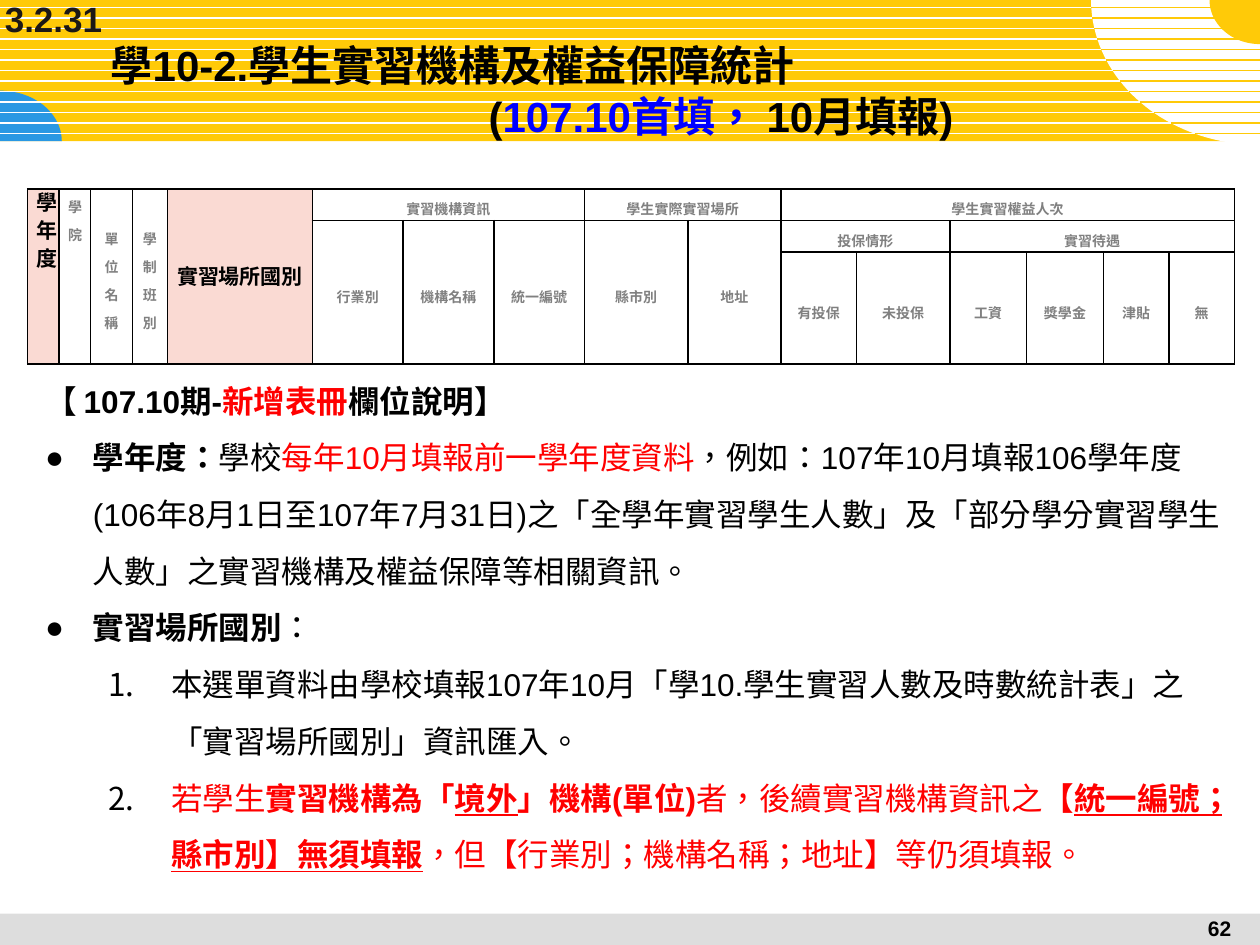
from math import cos, sin, sqrt, pi
from lxml.etree import SubElement
from pptx import Presentation
from pptx.dml.color import RGBColor
from pptx.enum.shapes import MSO_CONNECTOR as Connector, MSO_SHAPE as Shape
from pptx.enum.text import MSO_ANCHOR as Anchor, PP_ALIGN as Align
from pptx.oxml.ns import qn
from pptx.util import Inches, Pt

COLORS = {
    "gold": "FFCA08", "sky": "2998E3", "white": "FFFFFF", "footer": "DDDDDD",
    "black": "000000", "red": "FF0000", "blue": "0000FF", "gray": "808080",
    "pink": "FADAD3", "dark": "1C1815",
}
FONT = "Arial"

SECTION = "3.2.31"
PAGE_NUMBER = "62"
TITLE = [
    (0, [("學10-2.學生實習機構及權益保障統計", "black")]),
    (3, [("(", "black"), ("107.10首填， ", "blue"), ("10月填報)", "black")]),
]

COLUMNS = [0.25, 0.25, 0.33, 0.28, 1.15, 0.72, 0.72, 0.72,
           0.82, 0.74, 0.6, 0.74, 0.61, 0.61, 0.52, 0.52]
ROWS = [0.25, 0.25, 0.89]
HEADERS = [
    (0, 0, 3, 1, "學年度"), (0, 1, 3, 1, "學院"), (0, 2, 3, 1, "單位名稱"),
    (0, 3, 3, 1, "學制班別"), (0, 4, 3, 1, "實習場所國別"),
    (0, 5, 1, 3, "實習機構資訊"), (0, 8, 1, 2, "學生實際實習場所"),
    (0, 10, 1, 6, "學生實習權益人次"),
    (1, 5, 2, 1, "行業別"), (1, 6, 2, 1, "機構名稱"), (1, 7, 2, 1, "統一編號"),
    (1, 8, 2, 1, "縣市別"), (1, 9, 2, 1, "地址"),
    (1, 10, 1, 2, "投保情形"), (1, 12, 1, 4, "實習待遇"),
    (2, 10, 1, 1, "有投保"), (2, 11, 1, 1, "未投保"), (2, 12, 1, 1, "工資"),
    (2, 13, 1, 1, "獎學金"), (2, 14, 1, 1, "津貼"), (2, 15, 1, 1, "無"),
]
HIGHLIGHTED = {"學年度", "實習場所國別"}
TOP_ALIGNED = {"學年度", "學院"}

NOTES = [
    ("heading", [("【 107.10期-", "black", "b"), ("新增表冊", "red", "b"),
                 ("欄位說明】", "black", "b")]),
    ("bullet", [("學年度：", "black", "b"), ("學校", "black", ""),
                ("每年10月填報前一學年度資料", "red", ""),
                ("，例如：107年10月填報106學年度(106年8月1日至107年7月31日)之"
                 "「全學年實習學生人數」及「部分學分實習學生人數」之實習機構及權益保障等相關資訊。",
                 "black", "")]),
    ("bullet", [("實習場所國別", "black", "b"), ("：", "black", "")]),
    ("number", [("本選單資料由學校填報107年10月「學10.學生實習人數及時數統計表」之"
                 "「實習場所國別」資訊匯入。", "black", "")]),
    ("number", [("若學生", "red", ""), ("實習機構為「", "red", "b"), ("境外", "red", "bu"),
                ("」機構(單位)", "red", "b"), ("者，後續實習機構資訊之", "red", ""),
                ("【", "red", "b"), ("統一編號；縣市別】無須填報", "red", "bu"),
                ("，但【行業別；機構名稱；地址】等仍須填報。", "red", "")]),
]
INDENTS = {"bullet": (0.38, -0.38), "number": (1, -0.5)}

STRIPES = [0.06 + i / 12 for i in range(13)]
ARC_WIDTH, ARC_HEIGHT = 1.34, 1.15


def color(name):
    return RGBColor.from_string(COLORS[name])


def paint(shape, name):
    shape.shadow.inherit = False
    shape.fill.solid()
    shape.fill.fore_color.rgb = color(name)
    shape.line.fill.background()


def add_bar(page, top, height, name):
    bar = page.shapes.add_shape(Shape.RECTANGLE, 0, Inches(top), Inches(10), Inches(height))
    paint(bar, name)


def add_quarter(page, center, width, height, name):
    x, y = center
    angles = [i * pi / 80 for i in range(41)]
    points = [(Inches(x + width * cos(a)), Inches(y + height * sin(a))) for a in angles]
    builder = page.shapes.build_freeform(Inches(x), Inches(y))
    builder.add_line_segments(points, close=True)
    paint(builder.convert_to_shape(), name)


def add_stripe(page, left, y, name, weight):
    line = page.shapes.add_connector(
        Connector.STRAIGHT, Inches(left), Inches(y), Inches(10), Inches(y))
    line.line.color.rgb = color(name)
    line.line.width = Pt(weight)
    SubElement(line._element.spPr, qn("a:effectLst"))


def add_span(para, text, size, name, style="b"):
    span = para.add_run()
    span.text = text
    font = span.font
    font.name, font.size = FONT, Pt(size)
    font.bold, font.underline = "b" in style, "u" in style
    font.color.rgb = color(name)
    span._r.get_or_add_rPr().set("lang", "zh-TW")


def add_box(page, left, top, width, height):
    box = page.shapes.add_textbox(Inches(left), Inches(top), Inches(width), Inches(height))
    box.text_frame.word_wrap = True
    return box.text_frame


def add_paragraph(frame, index):
    return frame.add_paragraph() if index else frame.paragraphs[0]


def set_indent(para, left, first=0):
    props = para._p.get_or_add_pPr()
    props.set("marL", str(Inches(left)))
    props.set("indent", str(Inches(first)))
    return props


def add_marker(para, kind):
    props = set_indent(para, *INDENTS[kind])
    SubElement(SubElement(props, qn("a:buClr")), qn("a:srgbClr"), val=COLORS["black"])
    SubElement(props, qn("a:buFont"), typeface=FONT)
    if kind == "number":
        para.level = 1
        SubElement(props, qn("a:buAutoNum"), type="arabicPeriod")
    else:
        SubElement(props, qn("a:buChar"), char="●")


def add_borders(cell):
    props = cell._tc.get_or_add_tcPr()
    for side in ("a:lnL", "a:lnR", "a:lnT", "a:lnB"):
        line = SubElement(props, qn(side), w=str(Pt(1)))
        SubElement(SubElement(line, qn("a:solidFill")), qn("a:srgbClr"), val=COLORS["black"])


def add_header_table(page):
    table = page.shapes.add_table(
        len(ROWS), len(COLUMNS), Inches(0.22), Inches(1.5),
        Inches(sum(COLUMNS)), Inches(sum(ROWS))).table
    table.first_row = table.horz_banding = False
    for column, width in zip(table.columns, COLUMNS):
        column.width = Inches(width)
    for row, height in zip(table.rows, ROWS):
        row.height = Inches(height)
    for cell in table.iter_cells():
        add_borders(cell)
        cell.fill.background()
        cell.margin_left = cell.margin_right = Inches(0.07)
        cell.margin_top = cell.margin_bottom = 0
    for row, column, height, width, text in HEADERS:
        cell = table.cell(row, column)
        if height * width > 1:
            cell.merge(table.cell(row + height - 1, column + width - 1))
        cell.vertical_anchor = Anchor.TOP if text in TOP_ALIGNED else Anchor.MIDDLE
        para = cell.text_frame.paragraphs[0]
        para.alignment, para.line_spacing = Align.CENTER, Pt(16)
        if text in HIGHLIGHTED:
            cell.fill.solid()
            cell.fill.fore_color.rgb = color("pink")
            add_span(para, text, 12, "black")
        else:
            add_span(para, text, 8, "gray")


def add_background(page):
    add_bar(page, 0, 1.12, "gold")
    add_quarter(page, (0, 1.12), 0.49, -0.4, "sky")
    for y in STRIPES:
        add_stripe(page, 0, y, "white", 1)
    add_quarter(page, (10, 0), -ARC_WIDTH, ARC_HEIGHT, "white")
    for y in STRIPES:
        add_stripe(page, 10 - ARC_WIDTH * sqrt(1 - (y / ARC_HEIGHT) ** 2), y, "gold", 0.75)
    add_bar(page, 7.25, 0.25, "footer")
    add_quarter(page, (10, 0), -0.4, 0.35, "gold")


def main():
    deck = Presentation()
    deck.slide_width, deck.slide_height = Inches(10), Inches(7.5)
    page = deck.slides.add_slide(deck.slide_layouts[6])
    add_background(page)

    number = add_box(page, 9.36, 7.22, 0.64, 0.28).paragraphs[0]
    number.alignment = Align.CENTER
    add_span(number, PAGE_NUMBER, 12, "black")

    notes = add_box(page, 0.26, 2.83, 9.54, 4.24)
    for index, (kind, spans) in enumerate(NOTES):
        para = add_paragraph(notes, index)
        para.line_spacing = 1.5
        if kind == "heading":
            para.alignment = Align.JUSTIFY
        else:
            add_marker(para, kind)
        for text, name, style in spans:
            add_span(para, text, 18, name, style)

    title = add_box(page, 0.78, 0.28, 9.09, 0.87)
    title.vertical_anchor = Anchor.MIDDLE
    for index, (indent, spans) in enumerate(TITLE):
        para = add_paragraph(title, index)
        set_indent(para, indent)
        for text, name in spans:
            add_span(para, text, 24, name)

    add_header_table(page)
    section = add_box(page, -0.06, -0.07, 0.97, 0.44)
    section.word_wrap = False
    section.margin_right = 0
    add_span(section.paragraphs[0], SECTION, 20, "dark")
    deck.save("out.pptx")


if __name__ == "__main__":
    main()
